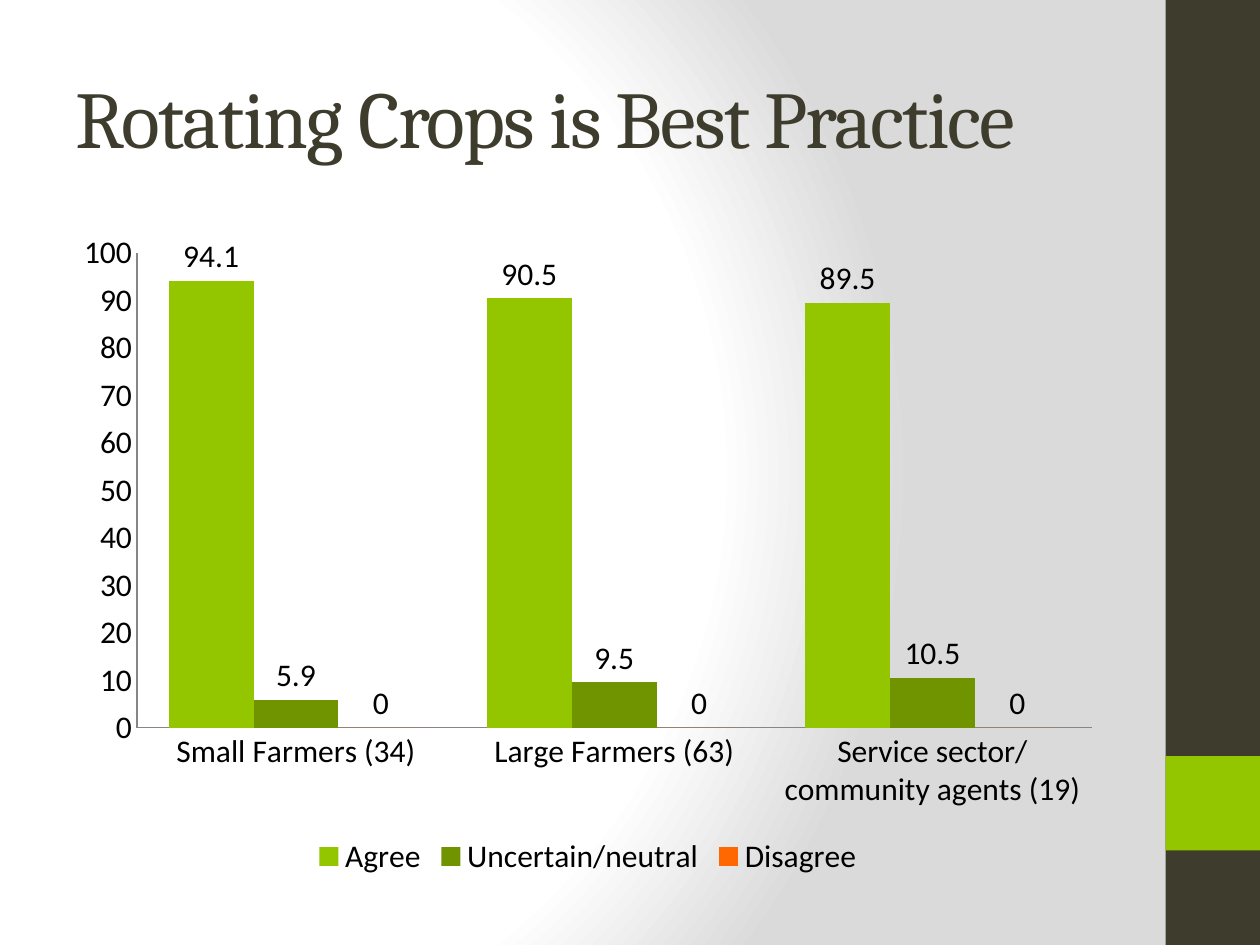
from lxml import etree
from pptx import Presentation
from pptx.chart.data import CategoryChartData
from pptx.dml.color import RGBColor
from pptx.enum.chart import XL_CHART_TYPE, XL_LABEL_POSITION, XL_LEGEND_POSITION, XL_TICK_MARK
from pptx.enum.shapes import MSO_SHAPE
from pptx.enum.text import MSO_ANCHOR
from pptx.oxml import parse_xml
from pptx.oxml.ns import nsdecls, qn
from pptx.util import Inches, Pt

CLUSTERED = XL_CHART_TYPE.COLUMN_CLUSTERED
OUTSIDE = XL_LABEL_POSITION.OUTSIDE_END
BOTTOM = XL_LEGEND_POSITION.BOTTOM
NO_TICK = XL_TICK_MARK.NONE
RECTANGLE = MSO_SHAPE.RECTANGLE
MIDDLE = MSO_ANCHOR.MIDDLE

CELL = 0.25
COLUMNS, ROWS = 40, 30
DARK, GREEN, AXIS_GREY = "3E3D2D", "94C600", "868686"
BACKDROP = [(0, "FFFFFF"), (75, "FFFFFF"), (100, "DADADA")]
GROUPS = [
    "Small Farmers (34)",
    "Large Farmers (63)",
    "Service sector/ community agents (19)",
]
ANSWERS = [
    ("Agree", (94.1, 90.5, 89.5), GREEN),
    ("Uncertain/neutral", (5.9, 9.5, 10.5), "6F9400"),
    ("Disagree", (0, 0, 0), "FF6700"),
]


def color(value):
    return RGBColor.from_string(value)


def grid(*cells):
    return [Inches(cell * CELL) for cell in cells]


def paint_backdrop(slide):
    fill = slide.background.fill
    fill.gradient()
    stops = "".join(
        f'<a:gs pos="{share * 1000}"><a:srgbClr val="{tone}"/></a:gs>'
        for share, tone in BACKDROP
    )
    radial = parse_xml(
        f'<a:gradFill {nsdecls("a")} rotWithShape="1"><a:gsLst>{stops}</a:gsLst>'
        '<a:path path="circle"><a:fillToRect l="20000" t="50000" r="100000" b="50000"/>'
        "</a:path></a:gradFill>"
    )
    linear = next(slide.element.iter(qn("a:gradFill")))
    linear.getparent().replace(linear, radial)


def add_block(slide, box, tone):
    block = slide.shapes.add_shape(RECTANGLE, *grid(*box))
    block.shadow.inherit = False
    block.fill.solid()
    block.fill.fore_color.rgb = color(tone)
    block.line.fill.background()


def add_sidebar(slide, box):
    left, top, width, height = box
    add_block(slide, box, DARK)
    add_block(slide, (left, top + height * 0.8, width, width), GREEN)


def add_title(slide, box):
    frame = slide.shapes.add_textbox(*grid(*box)).text_frame
    frame.word_wrap = True
    frame.vertical_anchor = MIDDLE
    frame.text = "Rotating Crops is Best Practice"
    heading = frame.paragraphs[0].runs[0]
    heading.font.name = "Cambria"
    heading.font.size = Pt(46)
    heading.font.color.rgb = color(DARK)
    heading.font._element.set("spc", "-100")


def style_axis(axis):
    axis.has_major_gridlines = False
    axis.major_tick_mark = NO_TICK
    axis.minor_tick_mark = NO_TICK
    axis.format.line.color.rgb = color(AXIS_GREY)
    axis.format.line.width = Pt(0.75)


def add_survey_chart(slide, box):
    survey = CategoryChartData()
    survey.categories = GROUPS
    for answer, shares, _ in ANSWERS:
        survey.add_series(answer, shares)
    chart = slide.shapes.add_chart(CLUSTERED, *grid(*box), survey).chart
    chart.has_title = False
    chart.font.name = "Calibri"
    chart.font.size = Pt(18)
    chart.font.color.rgb = color("000000")
    chart.has_legend = True
    chart.legend.position = BOTTOM
    chart.legend.include_in_layout = False

    style_axis(chart.category_axis)
    style_axis(chart.value_axis)
    chart.value_axis.minimum_scale = 0
    chart.value_axis.maximum_scale = 100
    chart.value_axis.major_unit = 10

    plot = chart.plots[0]
    plot.gap_width = 75
    plot.overlap = 0
    plot.vary_by_categories = False
    for series, (_, _, tone) in zip(plot.series, ANSWERS):
        series.format.fill.solid()
        series.format.fill.fore_color.rgb = color(tone)
        series.invert_if_negative = False
        series.data_labels.show_value = True
        series.data_labels.position = OUTSIDE


def main():
    deck = Presentation()
    deck.slide_width, deck.slide_height = grid(COLUMNS, ROWS)
    slide = deck.slides.add_slide(deck.slide_layouts[6])
    paint_backdrop(slide)
    add_sidebar(slide, (37, 0, 3, ROWS))
    add_title(slide, (2, 1.2, 33.32, 5))
    add_survey_chart(slide, (2, 7, 33.32, 21))
    deck.save("out.pptx")


if __name__ == "__main__":
    main()
